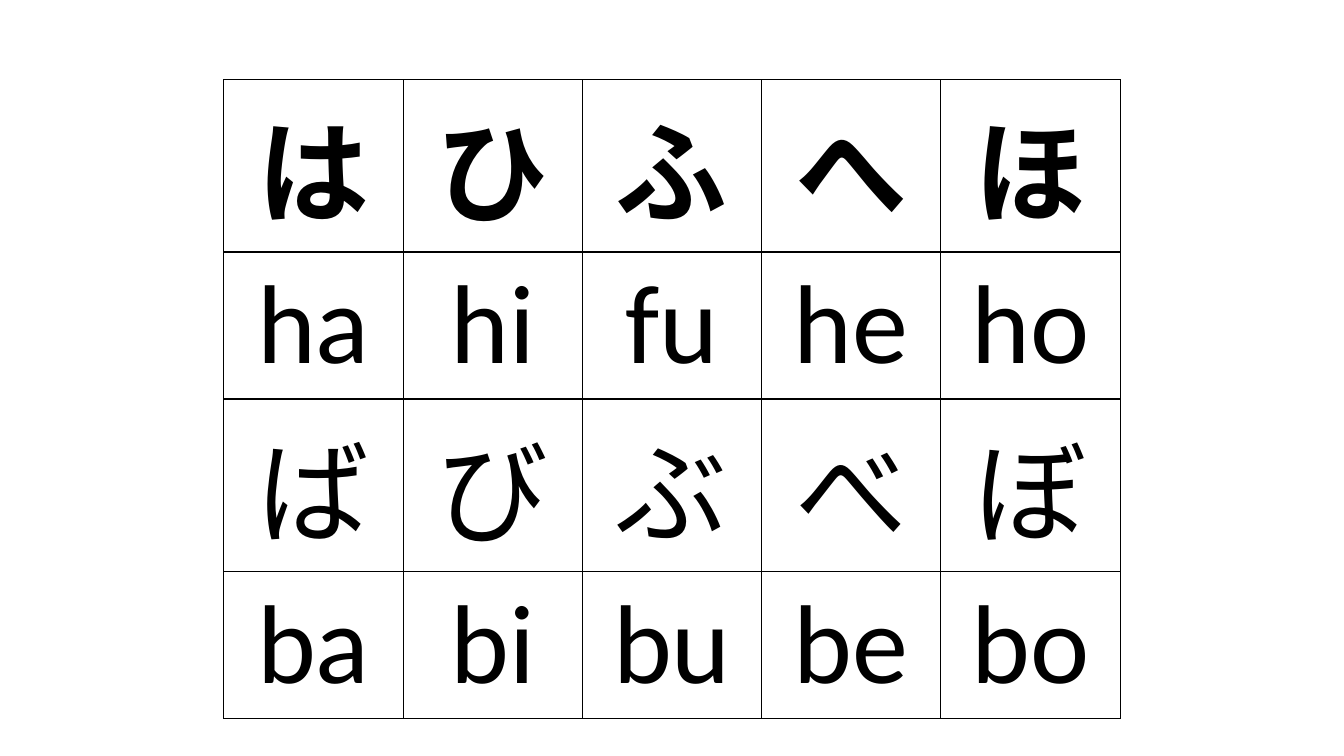
import pptx
import pptx.dml.color
import pptx.enum.text
import pptx.oxml
import pptx.oxml.ns
import pptx.util
from dataclasses import dataclass

Inches = pptx.util.Inches
RGB = pptx.dml.color.RGBColor


@dataclass
class Theme:
    ink: str = "000000"
    paper: str = "FFFFFF"
    font: str = "Calibri"
    size: int = 80
    rule: int = 1


class Deck:
    def __init__(self, theme):
        self.theme = theme
        self.show = pptx.Presentation()
        self.show.slide_width = Inches(13.33)
        self.show.slide_height = Inches(7.5)
        self.slide = self.show.slides.add_slide(self.show.slide_layouts[6])

    def format(self, item, values):
        for name, value in values.items():
            setattr(item, name, value)

    def border(self, cell):
        props = cell._tc.get_or_add_tcPr()
        width = pptx.util.Pt(self.theme.rule)
        for spot, side in enumerate(("lnL", "lnR", "lnT", "lnB")):
            line = pptx.oxml.parse_xml(
                f'<a:{side} {pptx.oxml.ns.nsdecls("a")} w="{width}"><a:solidFill>'
                f'<a:srgbClr val="{self.theme.ink}"/></a:solidFill></a:{side}>'
            )
            props.insert(spot, line)

    def cell(self, cell, text, bold):
        cell.fill.solid()
        cell.fill.fore_color.rgb = RGB.from_string(self.theme.paper)
        self.border(cell)
        para = cell.text_frame.paragraphs[0]
        para.alignment = pptx.enum.text.PP_ALIGN.CENTER
        run = para.add_run()
        run.text = text
        self.format(run.font, {
            "name": self.theme.font,
            "size": pptx.util.Pt(self.theme.size),
            "bold": bold,
        })
        run.font.color.rgb = RGB.from_string(self.theme.ink)

    def table(self, rows, left, top, width, height, row_high):
        frame = self.slide.shapes.add_table(
            len(rows), len(rows[0]),
            Inches(left), Inches(top), Inches(width), Inches(height),
        )
        table = frame.table
        self.format(table, {"first_row": False, "horz_banding": False})
        for r, words in enumerate(rows):
            table.rows[r].height = Inches(row_high)
            for c, text in enumerate(words):
                self.cell(table.cell(r, c), text, r == 0)
        frame.height = Inches(height)


def main():
    kana = [
        "は ひ ふ へ ほ".split(),
        "ha hi fu he ho".split(),
        "ば び ぶ べ ぼ".split(),
        "ba bi bu be bo".split(),
    ]
    deck = Deck(Theme())
    deck.table(kana, 2.22, 0.79, 8.89, 5.73, 0.41)
    deck.show.save("out.pptx")


if __name__ == "__main__":
    main()
